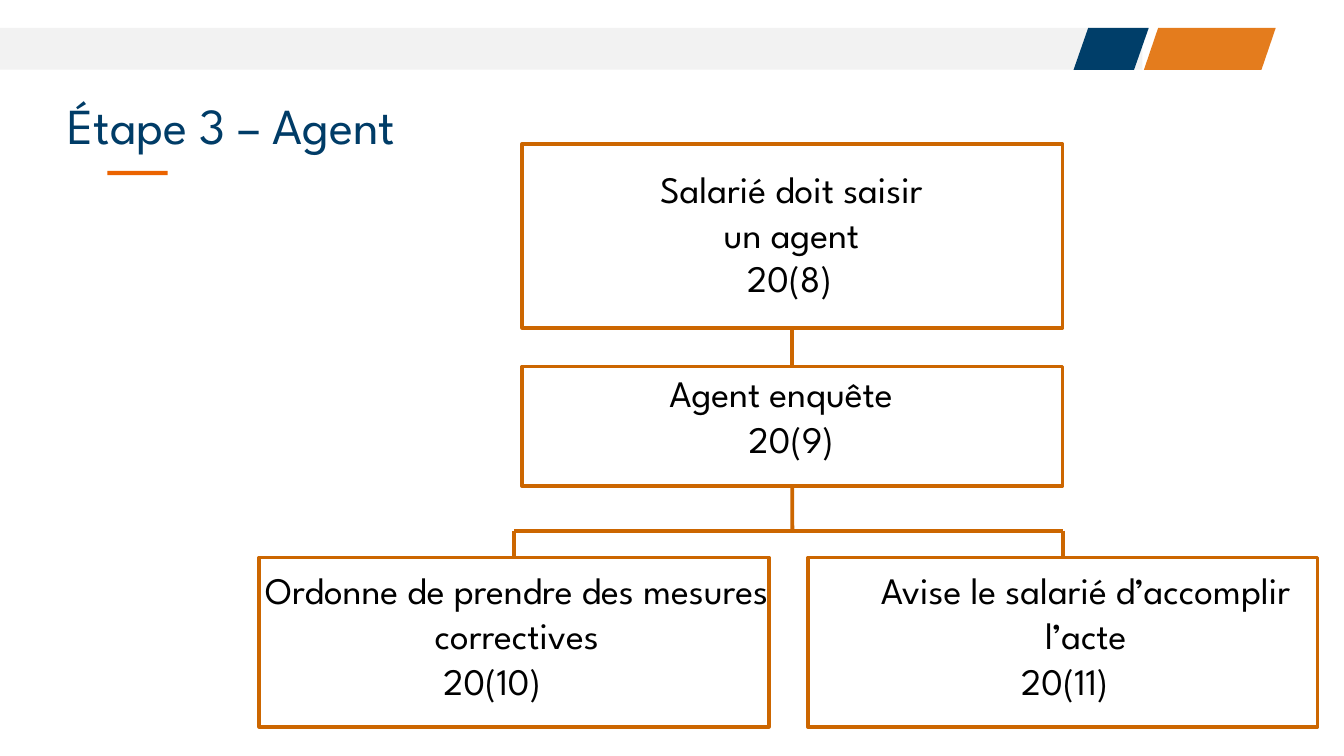
from pptx import Presentation
from pptx.util import Cm, Pt
from pptx.dml.color import RGBColor
from pptx.enum import shapes as sh, text as tx
from pptx.oxml.ns import qn
from lxml import etree

FONT = "League Spartan"
HUES = {"navy": "003C67", "blue": "003E69", "gold": "E47C1D", "grey": "F2F2F2",
        "dash": "EB6300", "line": "CC6600", "ink": "000000"}

TITLE = "Étape 3 – Agent"
BANDS = [
    ("RECTANGLE", 0, 0.53, 21.59, 0.79, "grey", None),
    ("PARALLELOGRAM", 21.62, 0.53, 2.49, 0.79, "gold", 0.34),
    ("PARALLELOGRAM", 20.29, 0.53, 1.42, 0.79, "blue", 0.35),
    ("RECTANGLE", 2.03, 3.23, 1.14, 0.08, "dash", None),
]
BOXES = {
    "seize": (9.87, 2.72, 10.21, 3.48),
    "probe": (9.87, 6.93, 10.21, 2.26),
    "order": (4.9, 10.54, 9.63, 3.2),
    "advise": (15.27, 10.54, 9.63, 3.2),
}
LABELS = [
    ("Salarié doit saisir un agent", 12.04, 3.15, 5.84, 1.7, True),
    ("20(8)", 14.12, 4.83, 1.7, 0.86, False),
    ("Agent enquête", 12.65, 6.99, 5.33, 0.86, False),
    ("20(9)", 14.15, 7.87, 1.7, 0.86, False),
    ("Ordonne de prendre des mesures correctives", 4.98, 10.72, 9.58, 1.7, True),
    ("20(10)", 8.38, 12.45, 2.11, 0.86, False),
    ("Avise le salarié d’accomplir l’acte", 16.33, 10.72, 8.38, 1.7, True),
    ("20(11)", 19.3, 12.45, 2.11, 0.86, False),
]
FORK = 10.03


def tint(hue):
    return RGBColor.from_string(HUES[hue])


def write(para, words, size, hue):
    run = para.add_run()
    run.text = words
    run.font.name = FONT
    run.font.size = Pt(size)
    run.font.color.rgb = tint(hue)


def shape(slide, kind, spot):
    form = slide.shapes.add_shape(getattr(sh.MSO_SHAPE, kind), *map(Cm, spot))
    form.shadow.inherit = False
    return form


def link(slide, start, end):
    line = slide.shapes.add_connector(sh.MSO_CONNECTOR.STRAIGHT, *map(Cm, start + end))
    line.line.color.rgb = tint("line")
    line.line.width = Pt(2)
    etree.SubElement(line._element.spPr, qn("a:effectLst"))
    return line


def head(slide):
    for kind, *spot, hue, slant in BANDS:
        band = shape(slide, kind, spot)
        band.fill.solid()
        band.fill.fore_color.rgb = tint(hue)
        band.line.fill.background()
        if slant:
            band.adjustments[0] = slant
    title = slide.shapes.title
    title.left, title.top, title.width, title.height = map(Cm, (1.09, 2.06, 22, 0.97))
    frame = title.text_frame
    frame.auto_size = tx.MSO_AUTO_SIZE.NONE
    frame.vertical_anchor = tx.MSO_ANCHOR.BOTTOM
    frame.margin_left = frame.margin_right = Cm(0.18)
    frame.margin_top = frame.margin_bottom = Cm(0.1)
    para = frame.paragraphs[0]
    para.alignment = tx.PP_ALIGN.LEFT
    para.line_spacing = 0.9
    write(para, TITLE, 27, "navy")


def chart(slide):
    forms = {}
    for name, spot in BOXES.items():
        box = forms[name] = shape(slide, "RECTANGLE", spot)
        box.fill.background()
        box.line.color.rgb = tint("line")
        box.line.width = Pt(2)
    mids = {name: x + w / 2 for name, (x, y, w, h) in BOXES.items()}
    stem = mids["probe"]

    first = link(slide, (stem, 6.2), (stem, 6.93))
    first.begin_connect(forms["seize"], 2)
    first.end_connect(forms["probe"], 0)
    link(slide, (stem, 9.19), (stem, FORK)).begin_connect(forms["probe"], 2)
    for name in ("order", "advise"):
        mid = mids[name]
        link(slide, (stem, FORK), (mid, FORK))
        link(slide, (mid, FORK), (mid, BOXES[name][1])).end_connect(forms[name], 0)


def label(slide):
    for words, *spot, wrap in LABELS:
        frame = slide.shapes.add_textbox(*map(Cm, spot)).text_frame
        frame.margin_left = frame.margin_right = frame.margin_top = frame.margin_bottom = 0
        frame.word_wrap = wrap
        frame.auto_size = tx.MSO_AUTO_SIZE.SHAPE_TO_FIT_TEXT
        para = frame.paragraphs[0]
        para.alignment = tx.PP_ALIGN.CENTER if wrap else tx.PP_ALIGN.LEFT
        write(para, words, 20, "ink")


def main():
    deck = Presentation()
    deck.slide_width, deck.slide_height = Cm(25.4), Cm(14.29)
    slide = deck.slides.add_slide(deck.slide_layouts[5])
    head(slide)
    chart(slide)
    label(slide)
    deck.save("out.pptx")


if __name__ == "__main__":
    main()
